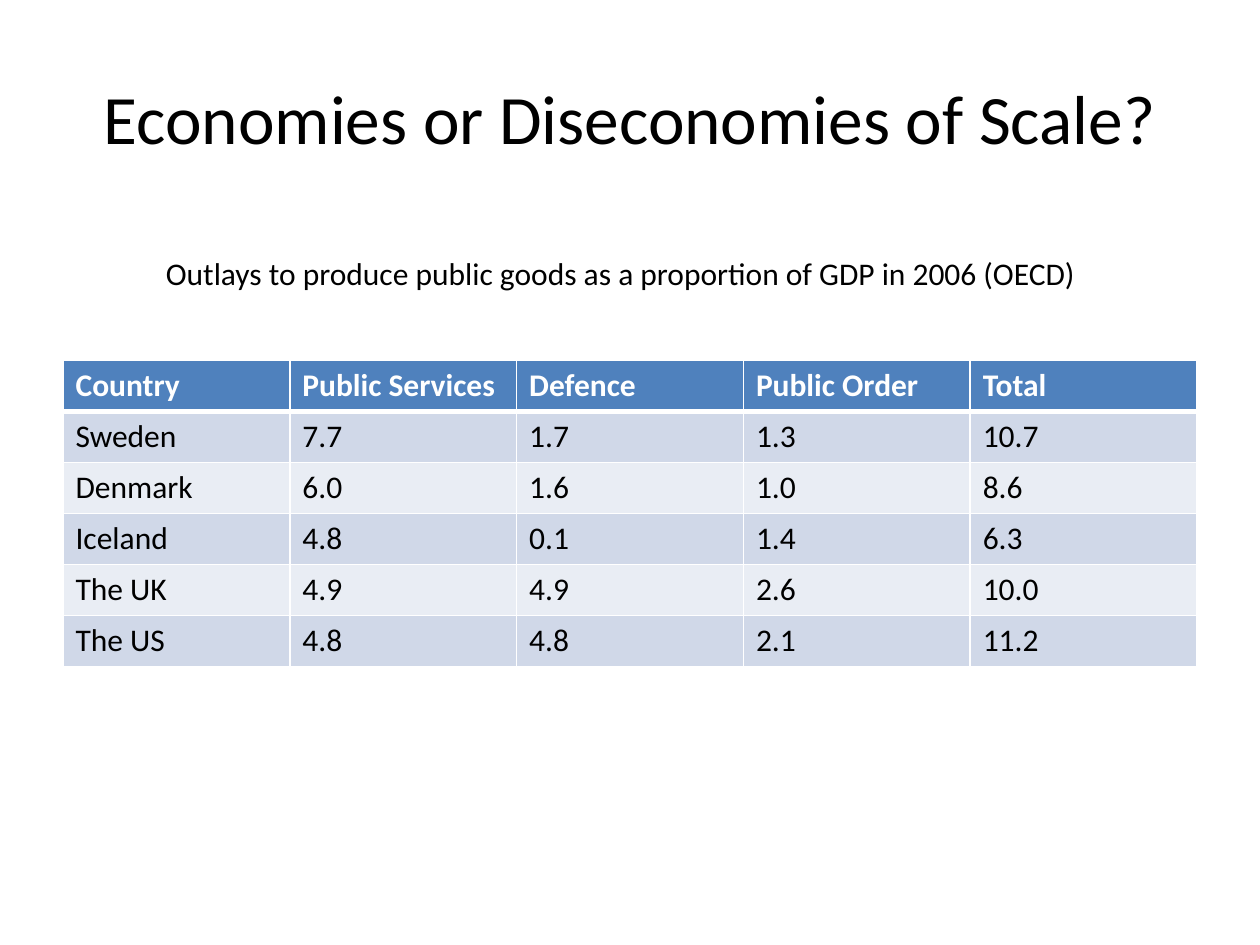
from dataclasses import dataclass
from lxml.etree import SubElement as Sub
from pptx import Presentation
from pptx.dml.color import RGBColor as RGB
from pptx.enum.text import MSO_ANCHOR as Anchor, PP_ALIGN as Align
from pptx.oxml.ns import qn
from pptx.util import Cm, Pt

FONT = "Calibri"
HUES = {"ink": "000000", "paper": "FFFFFF", "head": "4F81BD",
        "odd": "D0D8E8", "even": "E9EDF4"}
ROWS = [
    ("Country", "Public Services", "Defence", "Public Order", "Total"),
    ("Sweden", "7.7", "1.7", "1.3", "10.7"),
    ("Denmark", "6.0", "1.6", "1.0", "8.6"),
    ("Iceland", "4.8", "0.1", "1.4", "6.3"),
    ("The UK", "4.9", "4.9", "2.6", "10.0"),
    ("The US", "4.8", "4.8", "2.1", "11.2"),
]


@dataclass
class Label:
    text: str
    left: float
    top: float
    width: float
    height: float
    size: float
    anchor: Anchor


LABELS = [
    Label("Economies or Diseconomies of Scale?",
          1.27, 0.76, 22.86, 3.18, 39.6, Anchor.MIDDLE),
    Label("Outlays to produce public goods as a proportion of GDP in 2006 (OECD) ",
          1.27, 5, 22.63, 1.02, 18, Anchor.TOP),
]


def style(frame, size: float, hue: str, bold: bool = False) -> None:
    for run in frame.paragraphs[0].runs:
        run.font.name = FONT
        run.font.size = Pt(size)
        run.font.bold = bold
        run.font.color.rgb = RGB.from_string(HUES[hue])


def write(slide, label: Label) -> None:
    box = slide.shapes.add_textbox(Cm(label.left), Cm(label.top),
                                   Cm(label.width), Cm(label.height))
    frame = box.text_frame
    frame.word_wrap = True
    frame.vertical_anchor = label.anchor
    frame.text = label.text
    frame.paragraphs[0].alignment = Align.CENTER
    style(frame, label.size, "ink")


def edge(cell, side: str, width: float) -> None:
    line = Sub(cell._tc.get_or_add_tcPr(), qn(f"a:ln{side}"), w=str(Pt(width)))
    fill = Sub(line, qn("a:solidFill"))
    Sub(fill, qn("a:srgbClr"), val=HUES["paper"])


def grid(slide, left: float, top: float, width: float, height: float) -> None:
    table = slide.shapes.add_table(len(ROWS), len(ROWS[0]), Cm(left), Cm(top),
                                   Cm(width), Cm(height)).table
    for r, row in enumerate(ROWS):
        head = r == 0
        band = "head" if head else "odd" if r % 2 else "even"
        for c, text in enumerate(row):
            cell = table.cell(r, c)
            cell.text_frame.text = text
            style(cell.text_frame, 18, "paper" if head else "ink", head)
            for side in "LRTB":
                thick = (head and side == "B") or (r == 1 and side == "T")
                edge(cell, side, 3 if thick else 1)
            cell.fill.solid()
            cell.fill.fore_color.rgb = RGB.from_string(HUES[band])


def main() -> None:
    deck = Presentation()
    deck.slide_width, deck.slide_height = Cm(25.4), Cm(19.05)
    slide = deck.slides.add_slide(deck.slide_layouts[6])
    grid(slide, 1.27, 7.26, 22.86, 6.18)
    for label in LABELS:
        write(slide, label)
    deck.save("out.pptx")


if __name__ == "__main__":
    main()
